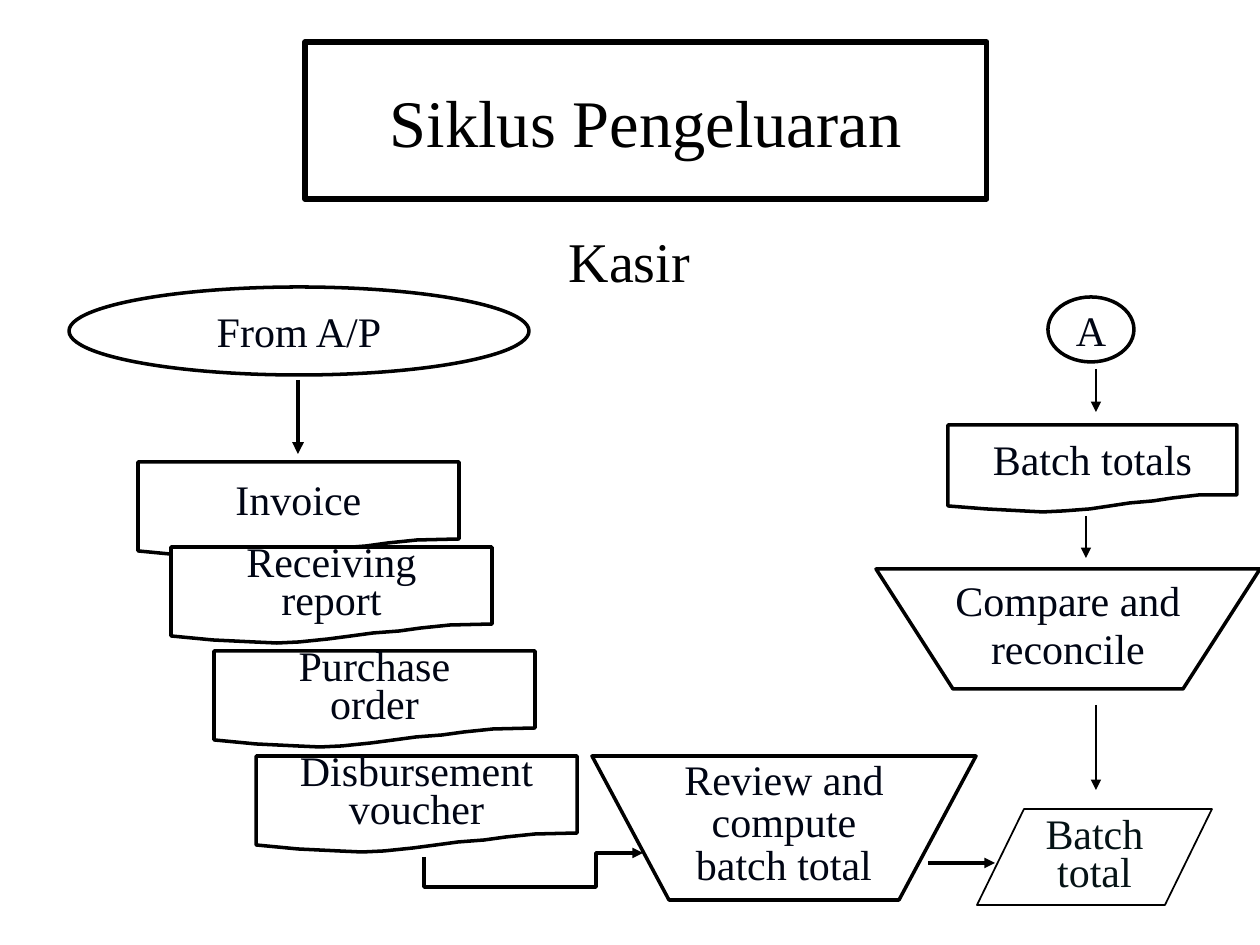
from dataclasses import dataclass

from lxml import etree
from pptx import Presentation
from pptx.dml.color import RGBColor
from pptx.enum.shapes import MSO_CONNECTOR, MSO_SHAPE
from pptx.enum.text import MSO_ANCHOR, PP_ALIGN
from pptx.oxml.ns import qn
from pptx.util import Pt

RECTANGLE, OVAL = MSO_SHAPE.RECTANGLE, MSO_SHAPE.OVAL
STRAIGHT = MSO_CONNECTOR.STRAIGHT
MIDDLE, TOP = MSO_ANCHOR.MIDDLE, MSO_ANCHOR.TOP
CENTER = PP_ALIGN.CENTER
EMU_PER_PX = 914400 / 126

DOCUMENT = [(0, 0.93), (0.13, 0.97), (0.26, 0.99), (0.33, 1), (0.4, 0.99),
            (0.49, 0.96), (0.56, 0.93), (0.63, 0.9), (0.71, 0.87),
            (0.78, 0.84), (0.87, 0.81), (1, 0.8), (1, 0), (0, 0)]
TRAPEZOID = [(0, 0), (1, 0), (0.8, 1), (0.2, 1)]
PARALLELOGRAM = [(0.2, 0), (1, 0), (0.8, 1), (0, 1)]


@dataclass(frozen=True)
class Theme:
    """Colours, font and type sizes of the slide."""
    font: str = "Times New Roman"
    ink: RGBColor = RGBColor(0, 0, 0)
    label: RGBColor = RGBColor(0x00, 0x05, 0x14)
    total: RGBColor = RGBColor(0x05, 0x13, 0x15)
    paper: RGBColor = RGBColor(255, 255, 255)
    title_size: int = 38
    subtitle_size: int = 32
    label_size: int = 24
    label_gap: float = 5.5


THEME = Theme()


def emu(px):
    """Turn px into EMU."""
    return round(px * EMU_PER_PX)


def style(shape, line_width=0, filled=True):
    """Set fill and outline, without shadow."""
    shape.shadow.inherit = False
    if filled:
        shape.fill.solid()
        shape.fill.fore_color.rgb = THEME.paper
    else:
        shape.fill.background()
    if line_width:
        shape.line.color.rgb = THEME.ink
        shape.line.width = Pt(line_width)
    else:
        shape.line.fill.background()


def write(shape, lines, size, color, spacings=(1,), gap=0, anchor=MIDDLE, wrap=False):
    """Write centred paragraphs, the last spacing serving the remaining lines."""
    frame = shape.text_frame
    frame.word_wrap = wrap
    frame.vertical_anchor = anchor
    for index, line in enumerate(lines):
        paragraph = frame.paragraphs[0] if index == 0 else frame.add_paragraph()
        paragraph.alignment = CENTER
        paragraph.line_spacing = float(spacings[min(index, len(spacings) - 1)])
        paragraph.space_before = Pt(gap)
        run = paragraph.add_run()
        run.text = line
        run.font.name = THEME.font
        run.font.size = Pt(size)
        run.font.color.rgb = color


def add_preset(shapes, preset, box, line_width=0, filled=True):
    """Add a styled preset shape in a px box."""
    shape = shapes.add_shape(preset, *map(emu, box))
    style(shape, line_width, filled)
    return shape


def add_path(shapes, points, line_width, closed=True):
    """Add a styled freeform through px points."""
    builder = shapes.build_freeform(*points[0], scale=EMU_PER_PX)
    builder.add_line_segments(points[1:], close=closed)
    shape = builder.convert_to_shape()
    style(shape, line_width, closed)
    return shape


def add_arrowhead(shape):
    """Put a triangle at the end of a line."""
    line = shape.line._get_or_add_ln()
    etree.SubElement(line, qn("a:tailEnd"), type="triangle")


def add_arrow(slide, start, end, line_width):
    """Add a straight arrow between px points."""
    arrow = slide.shapes.add_connector(STRAIGHT, *map(emu, (*start, *end)))
    arrow.line.color.rgb = THEME.ink
    arrow.line.width = Pt(line_width)
    add_arrowhead(arrow)
    etree.SubElement(arrow._element.spPr, qn("a:effectLst"))


def add_symbol(slide, outline, box, side, lines, spacings=(1,), line_width=2,
               color=THEME.label, gap=THEME.label_gap):
    """Group an outline with a label inset by a share of the width."""
    left, top, width, height = box
    shapes = slide.shapes.add_group_shape().shapes
    points = [(round(left + x * width), round(top + y * height)) for x, y in outline]
    add_path(shapes, points, line_width)
    floor = 0.77 if outline is DOCUMENT else 1
    label = add_preset(shapes, RECTANGLE, (left + side * width, top + 6,
                                           width * (1 - 2 * side), height * floor - 12))
    write(label, lines, THEME.label_size, color, spacings, gap)


def add_terminal(slide, box, text):
    """Add an oval start or connector point."""
    oval = add_preset(slide.shapes, OVAL, box, 2)
    write(oval, [text], THEME.label_size, THEME.label, gap=THEME.label_gap)


def add_heading(slide, box, subtitle_box):
    """Add the framed title and the subtitle."""
    title = add_preset(slide.shapes, RECTANGLE, box, 3, filled=False)
    write(title, ["Siklus Pengeluaran"], THEME.title_size, THEME.ink, wrap=True)
    subtitle = slide.shapes.add_textbox(*map(emu, subtitle_box))
    write(subtitle, ["Kasir"], THEME.subtitle_size, THEME.ink, anchor=TOP, wrap=True)


def add_voucher_flow(slide, left, top):
    """Add the incoming papers on the left."""
    add_terminal(slide, (left, top, 460, 88), "From A/P")
    add_arrow(slide, (left + 229, top + 93), (left + 229, top + 167), 2.25)
    papers = [(69, 175, ["Invoice"]),
              (102, 260, ["Receiving", "report"]),
              (145, 364, ["Purchase", "order"]),
              (187, 469, ["Disbursement", "voucher"])]
    for x, y, lines in papers:
        spacings = (0.75, 0.5) if len(lines) > 1 else (1,)
        add_symbol(slide, DOCUMENT, (left + x, top + y, 321, 96), 0.05, lines, spacings)


def add_review(slide, left, top):
    """Add the review step with its way in and out."""
    add_symbol(slide, TRAPEZOID, (left, top, 384, 144), 0.22,
               ["Review and", "compute", "batch total"], (0.65,))
    bends = [(-168, 101), (-168, 131), (4, 131), (4, 97), (51, 97)]
    elbow = add_path(slide.shapes, [(left + x, top + y) for x, y in bends], 2, closed=False)
    add_arrowhead(elbow)
    add_arrow(slide, (left + 336, top + 107), (left + 403, top + 107), 2)


def add_batch_flow(slide, left, top):
    """Add the batch total check on the right."""
    add_terminal(slide, (left + 172, top, 86, 65), "A")
    add_symbol(slide, DOCUMENT, (left + 72, top + 128, 289, 87), 0.05, ["Batch totals"])
    add_symbol(slide, PARALLELOGRAM, (left + 101, top + 512, 235, 96), 0.24,
               ["Batch", "total"], (0.75,), 1, THEME.total, 0)
    add_symbol(slide, TRAPEZOID, (left, top + 272, 384, 120), 0.22,
               ["Compare and", "reconcile"], (0.75,))
    for x, start, end in [(220, 72, 115), (210, 219, 261), (220, 408, 493)]:
        add_arrow(slide, (left + x, top + start), (left + x, top + end), 1.5)


def main():
    """Build and save the slide."""
    presentation = Presentation()
    presentation.slide_width, presentation.slide_height = emu(1260), emu(945)
    slide = presentation.slides.add_slide(presentation.slide_layouts[6])
    add_heading(slide, (305, 42, 682, 157), (94, 220, 1071, 620))
    add_voucher_flow(slide, 69, 287)
    add_batch_flow(slide, 876, 297)
    add_review(slide, 592, 756)
    presentation.save("out.pptx")


if __name__ == "__main__":
    main()
